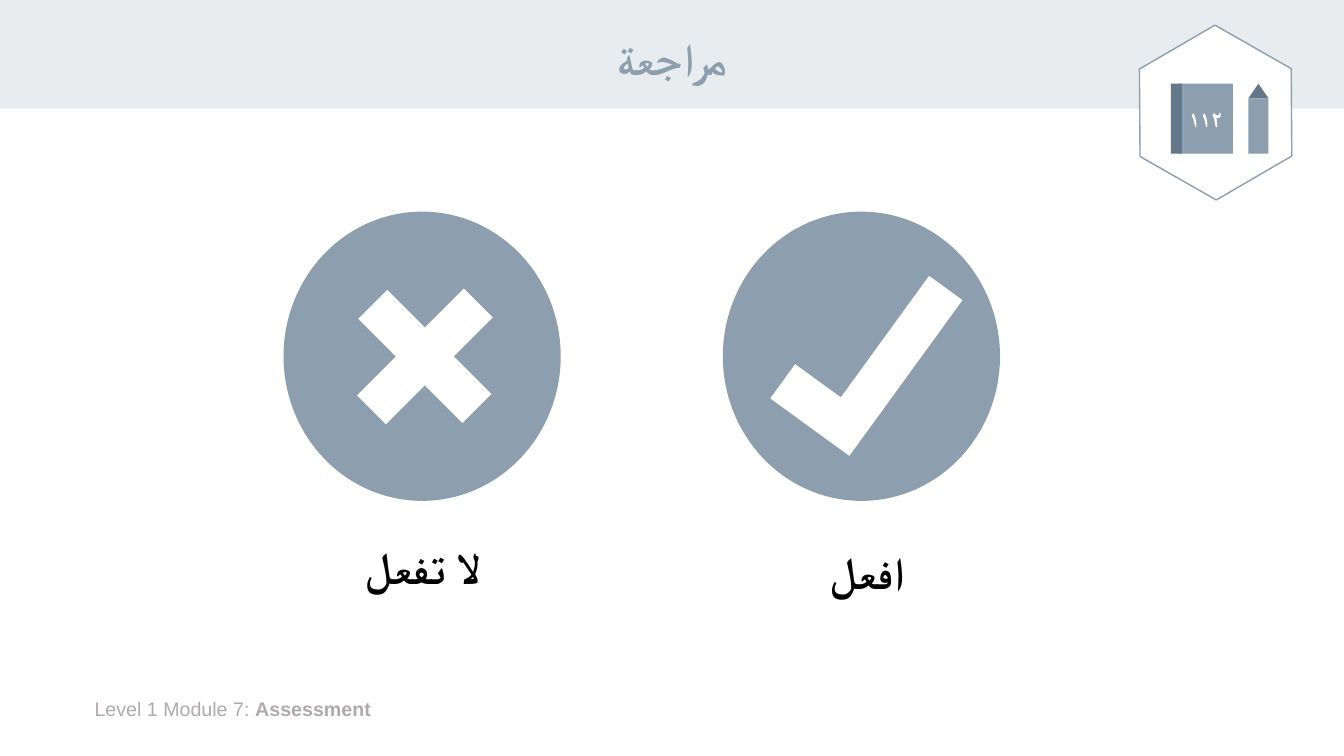
import pptx
import pptx.util
import pptx.dml.color
import pptx.enum.shapes
import pptx.enum.text
import pptx.oxml

Pt = pptx.util.Pt
SHAPE = pptx.enum.shapes.MSO_SHAPE
ALIGN = pptx.enum.text.PP_ALIGN
MIDDLE = pptx.enum.text.MSO_ANCHOR.MIDDLE
FONT = "Arial"
COLORS = {
    "band": "E8ECEF",
    "slate": "8D9EAE",
    "dark": "62778A",
    "white": "FFFFFF",
    "black": "000000",
    "footer": "AFABAB",
}


def rgb(name):
    """Return the named colour."""
    return pptx.dml.color.RGBColor.from_string(COLORS[name])


def add_figure(shapes, kind, box, fill, line=None, rotation=0, adjustments=()):
    """Add a flat preset shape in a (left, top, width, height) box."""
    figure = shapes.add_shape(kind, *map(Pt, box))
    figure.shadow.inherit = False
    figure.fill.solid()
    figure.fill.fore_color.rgb = rgb(fill)
    if line:
        figure.line.color.rgb = rgb(line)
        figure.line.width = Pt(1)
    else:
        figure.line.fill.background()
    figure.rotation = rotation
    for index, value in enumerate(adjustments):
        figure.adjustments[index] = value
    return figure


def add_text_box(page, box):
    """Add an empty wrapping text box."""
    text_box = page.shapes.add_textbox(*map(Pt, box))
    text_box.text_frame.word_wrap = True
    return text_box


def style_span(span, size, color, bold):
    """Format one run of text."""
    span.font.name = FONT
    span.font.size = Pt(size)
    span.font.bold = bold
    span.font.color.rgb = rgb(color)


def write_arabic(holder, text, size, color):
    """Write centred bold right-to-left text into a shape."""
    holder.text_frame.text = text
    para = holder.text_frame.paragraphs[0]
    para.alignment = ALIGN.CENTER
    para._p.get_or_add_pPr().set("rtl", "1")
    span = para.runs[0]
    style_span(span, size, color, True)
    script_font = pptx.oxml.parse_xml(
        '<a:cs xmlns:a="http://schemas.openxmlformats.org/drawingml/2006/main"'
        f' typeface="{FONT}"/>'
    )
    span.font._element.append(script_font)
    return para


def draw_header(page, box):
    """Draw the title band across the top."""
    left, top, width, height = box
    add_figure(page.shapes, SHAPE.RECTANGLE, box, "band")
    title = add_text_box(page, (left + 66, top + 9.5, width - 132, height - 9.5))
    title.text_frame.vertical_anchor = MIDDLE
    write_arabic(title, "مراجعة", 32, "slate").line_spacing = 0.9


def draw_footer(page, box):
    """Write the module name at the foot of the page."""
    para = add_text_box(page, box).text_frame.paragraphs[0]
    for text, bold in (("Level 1 Module 7: ", False), ("Assessment", True)):
        span = para.add_run()
        span.text = text
        style_span(span, 14, "footer", bold)


def draw_sign(page, box, kind, mark, rotation, adjustments):
    """Draw a disc with a white mark, placed relative to the disc."""
    left, top = box[:2]
    shapes = page.shapes.add_group_shape().shapes
    add_figure(shapes, SHAPE.OVAL, box, "slate")
    mark_box = (left + mark[0], top + mark[1], mark[2], mark[3])
    add_figure(shapes, kind, mark_box, "white",
               rotation=rotation, adjustments=adjustments)


def draw_caption(page, box, text):
    """Write the word below a sign."""
    write_arabic(add_text_box(page, box), text, 32, "black")


def draw_badge(page, box):
    """Draw the hexagon with the numbered book and the pencil."""
    left, top = box[:2]
    shapes = page.shapes.add_group_shape().shapes
    add_figure(shapes, SHAPE.HEXAGON, box, "white", "slate", 29.7, (0.29, 1.155))
    icon_top = top + 33.4
    book = add_figure(shapes, SHAPE.RECTANGLE,
                      (left + 36, icon_top, 39, 50), "slate")
    book.text_frame.word_wrap = False
    book.text_frame.vertical_anchor = MIDDLE
    write_arabic(book, "١١٢", 16, "white")
    add_figure(shapes, SHAPE.RECTANGLE, (left + 30.6, icon_top, 8, 50), "dark")
    pencil = left + 86
    add_figure(shapes, SHAPE.ISOSCELES_TRIANGLE,
               (pencil, icon_top, 14.4, 10.5), "dark")
    add_figure(shapes, SHAPE.RECTANGLE,
               (pencil, icon_top + 10.5, 14.4, 39.5), "slate")


def main():
    """Build the review slide and save it."""
    deck = pptx.Presentation()
    deck.slide_width, deck.slide_height = Pt(960), Pt(540)
    page = deck.slides.add_slide(deck.slide_layouts[6])
    draw_header(page, (0, 0, 960, 77.6))
    draw_footer(page, (60.5, 494.6, 817, 24.5))
    draw_sign(page, (516.3, 151.2, 198, 206.6), SHAPE.CORNER,
              (33.8, 63.4, 137.5, 69.8), 306, (0.422, 0.433))
    draw_sign(page, (202.5, 151.2, 198, 206.6), SHAPE.MATH_PLUS,
              (29.3, 30, 143.3, 146.9), 45, (0.204,))
    draw_caption(page, (202.5, 382.3, 198, 46), "لا تفعل")
    draw_caption(page, (519.8, 385.2, 198, 46), "افعل")
    draw_badge(page, (805.7, 26.4, 125.3, 108))
    deck.save("out.pptx")


if __name__ == "__main__":
    main()
